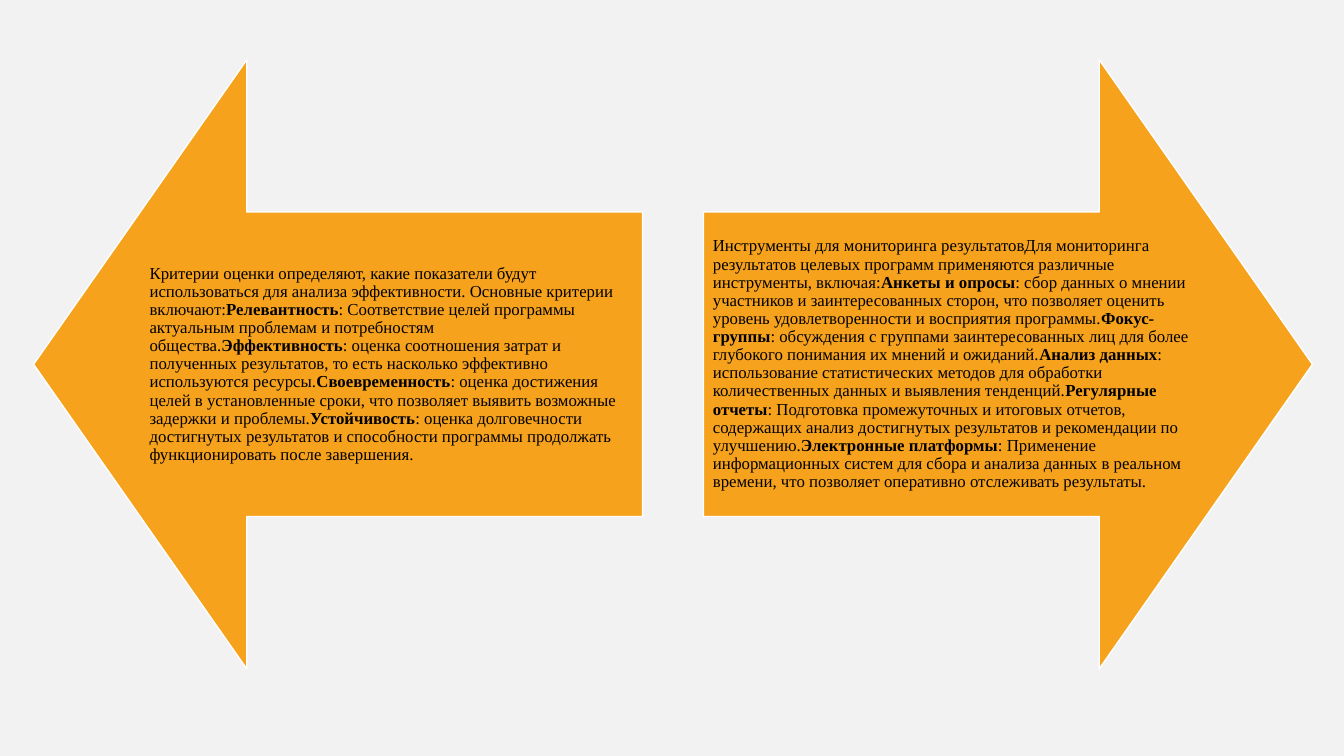
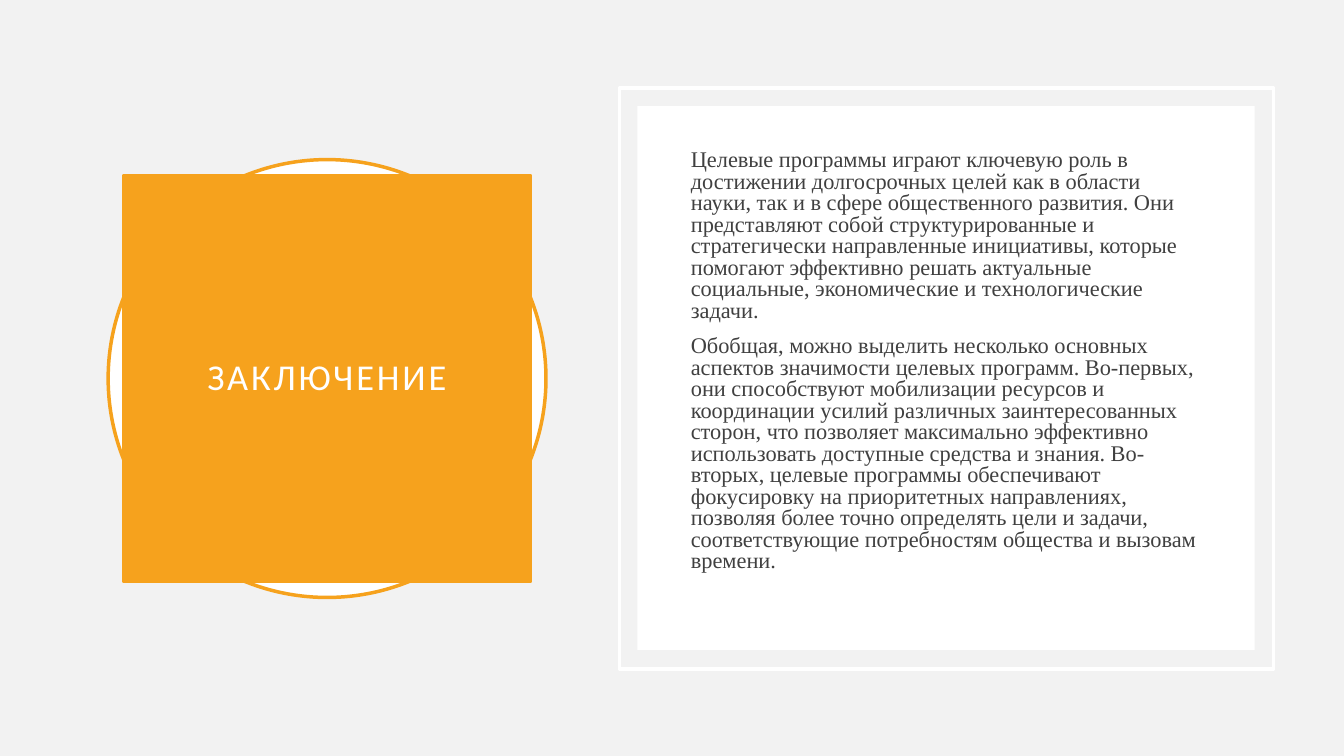
from pptx import Presentation
from pptx import util as u
from pptx.dml.color import RGBColor
from pptx.enum import shapes, text

PX = 9525
COLORS = {
    "page": "F2F2F2",
    "accent": "F6A21D",
    "white": "FFFFFF",
    "black": "000000",
    "body": "404040",
}
SERIF = "Times New Roman"
SANS = "Calibri"

CRITERIA_INTRO = (
    "Критерии оценки определяют, какие показатели будут использоваться "
    "для анализа эффективности. Основные критерии включают:"
)
CRITERIA = [
    ("Релевантность", "Соответствие целей программы актуальным проблемам и потребностям общества."),
    ("Эффективность", "оценка соотношения затрат и полученных результатов, то есть "
     "насколько эффективно используются ресурсы."),
    ("Своевременность", "оценка достижения целей в установленные сроки, что позволяет "
     "выявить возможные задержки и проблемы."),
    ("Устойчивость", "оценка долговечности достигнутых результатов и способности "
     "программы продолжать функционировать после завершения."),
]
TOOLS_INTRO = (
    "Инструменты для мониторинга результатовДля мониторинга результатов "
    "целевых программ применяются различные инструменты, включая:"
)
TOOLS = [
    ("Анкеты и опросы", "сбор данных о мнении участников и заинтересованных сторон, "
     "что позволяет оценить уровень удовлетворенности и восприятия программы."),
    ("Фокус-группы", "обсуждения с группами заинтересованных лиц для более глубокого "
     "понимания их мнений и ожиданий."),
    ("Анализ данных", "использование статистических методов для обработки "
     "количественных данных и выявления тенденций."),
    ("Регулярные отчеты", "Подготовка промежуточных и итоговых отчетов, содержащих "
     "анализ достигнутых результатов и рекомендации по улучшению."),
    ("Электронные платформы", "Применение информационных систем для сбора и анализа "
     "данных в реальном времени, что позволяет оперативно отслеживать результаты."),
]
CONCLUSION = [
    "Целевые программы играют ключевую роль в достижении долгосрочных целей как в "
    "области науки, так и в сфере общественного развития. Они представляют собой "
    "структурированные и стратегически направленные инициативы, которые помогают "
    "эффективно решать актуальные социальные, экономические и технологические задачи.",
    "Обобщая, можно выделить несколько основных аспектов значимости целевых программ. "
    "Во-первых, они способствуют мобилизации ресурсов и координации усилий различных "
    "заинтересованных сторон, что позволяет максимально эффективно использовать "
    "доступные средства и знания. Во-вторых, целевые программы обеспечивают "
    "фокусировку на приоритетных направлениях, позволяя более точно определять цели и "
    "задачи, соответствующие потребностям общества и вызовам времени.",
]


def px(*lengths):
    return [u.Emu(length * PX) for length in lengths]


def color(name):
    return RGBColor.from_string(COLORS[name])


def paint(shape, fill=None, line=None, width=1):
    if fill:
        shape.fill.solid()
        shape.fill.fore_color.rgb = color(fill)
    else:
        shape.fill.background()
    if line:
        shape.line.color.rgb = color(line)
        shape.line.width = u.Pt(width)
    else:
        shape.line.fill.background()


def add_figure(page, kind, place, **look):
    figure = page.shapes.add_shape(kind, *px(*place))
    figure.shadow.inherit = False
    paint(figure, **look)
    return figure


def set_frame(box, left, top, right, bottom):
    frame = box.text_frame
    frame.word_wrap = True
    frame.auto_size = text.MSO_AUTO_SIZE.NONE
    frame.vertical_anchor = text.MSO_ANCHOR.MIDDLE
    frame.margin_left, frame.margin_top, frame.margin_right, frame.margin_bottom = px(
        left, top, right, bottom
    )
    return frame


def style(para, size, face, ink, spacing, align=text.PP_ALIGN.LEFT):
    para.alignment = align
    para.line_spacing = spacing
    para.font.size = u.Pt(size)
    para.font.name = face
    para.font.color.rgb = color(ink)


def add_span(para, words, bold=False):
    span = para.add_run()
    span.text = words
    if bold:
        span.font.bold = True
    return span


def add_text_arrow(page, kind, left, intro, points):
    arrow = add_figure(page, kind, (left, 57, 580, 580), fill="accent", line="white")
    arrow.adjustments[0] = 0.5
    arrow.adjustments[1] = 0.35
    para = set_frame(arrow, 9, 9, 9, 9).paragraphs[0]
    style(para, 12, SERIF, "black", 0.9)
    add_span(para, intro)
    for term, meaning in points:
        add_span(para, term, bold=True)
        add_span(para, f": {meaning}")


def set_title(page, words, place):
    title = page.shapes.title
    title.left, title.top, title.width, title.height = px(*place)
    paint(title, fill="accent", line="accent", width=2.5)
    para = set_frame(title, 19, 19, 19, 19).paragraphs[0]
    style(para, 26, SANS, "white", 0.9, text.PP_ALIGN.CENTER)
    add_span(para, words)._r.get_or_add_rPr().set("spc", "200")


def add_body(page, paragraphs, place):
    box = page.shapes.add_textbox(*px(*place))
    frame = set_frame(box, 10, 5, 10, 38)
    for index, words in enumerate(paragraphs):
        para = frame.add_paragraph() if index else frame.paragraphs[0]
        style(para, 16, SERIF, "body", 0.8)
        para.space_before = u.Pt(10)
        add_span(para, words)


def build_arrows(deck):
    page = deck.slides.add_slide(deck.slide_layouts.get_by_name("Blank"))
    add_text_arrow(page, shapes.MSO_SHAPE.LEFT_ARROW, 32, CRITERIA_INTRO, CRITERIA)
    add_text_arrow(page, shapes.MSO_SHAPE.RIGHT_ARROW, 670, TOOLS_INTRO, TOOLS)


def build_conclusion(deck):
    page = deck.slides.add_slide(deck.slide_layouts.get_by_name("Title Only"))
    circle = add_figure(page, shapes.MSO_SHAPE.OVAL, (103, 152, 417, 417),
                        fill="white", line="accent", width=2.5)
    page.shapes.title._element.addprevious(circle._element)
    set_title(page, "ЗАКЛЮЧЕНИЕ", (118, 167, 387, 387))
    add_figure(page, shapes.MSO_SHAPE.RECTANGLE, (590, 84, 623, 553), line="white", width=2.5)
    add_figure(page, shapes.MSO_SHAPE.RECTANGLE, (607, 101, 588, 518), fill="white")
    add_body(page, CONCLUSION, (648, 139, 507, 444))


def main():
    deck = Presentation()
    deck.slide_width, deck.slide_height = px(1280, 720)
    backdrop = deck.slide_master.background.fill
    backdrop.solid()
    backdrop.fore_color.rgb = color("page")
    build_arrows(deck)
    build_conclusion(deck)
    deck.save("out.pptx")


if __name__ == "__main__":
    main()
